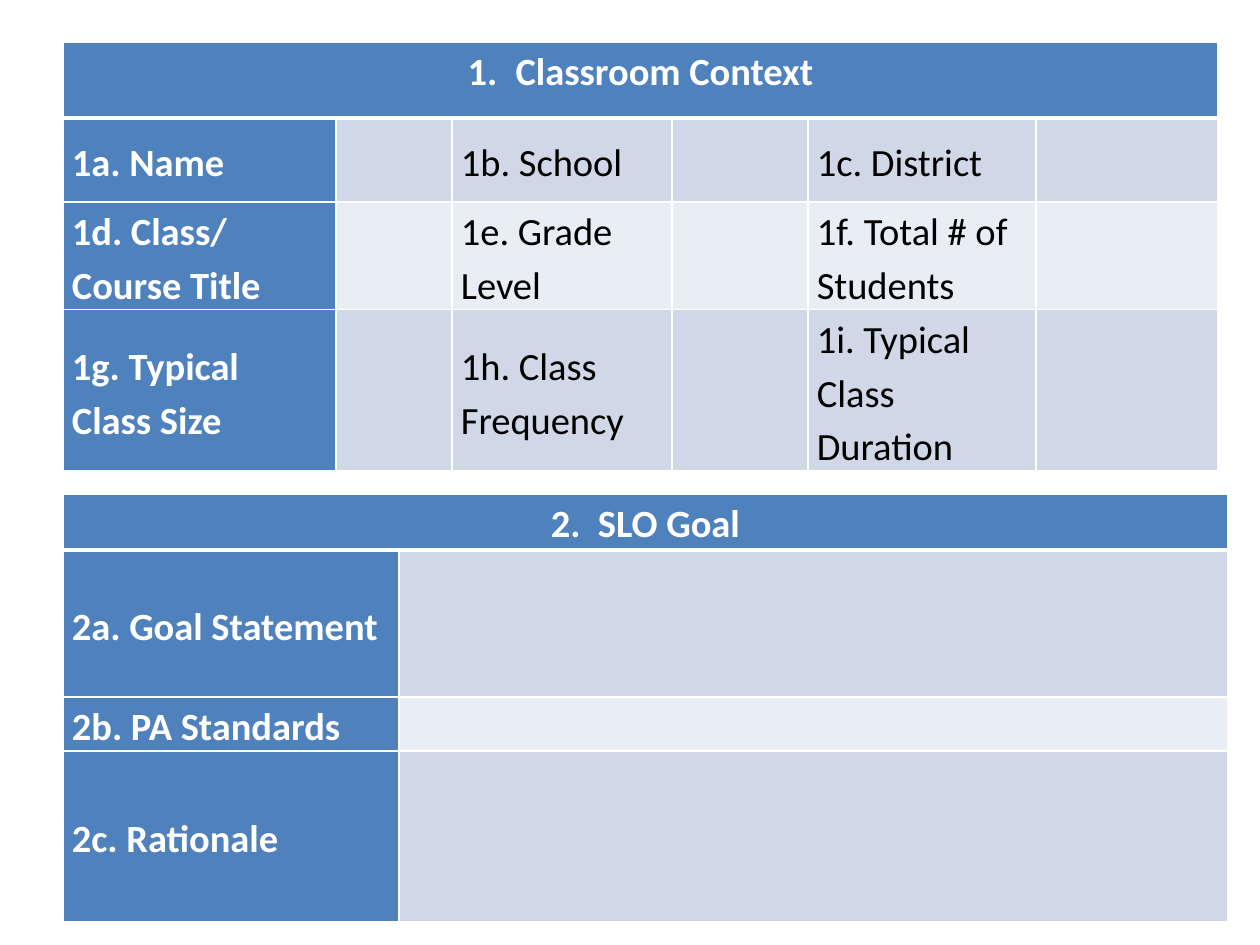
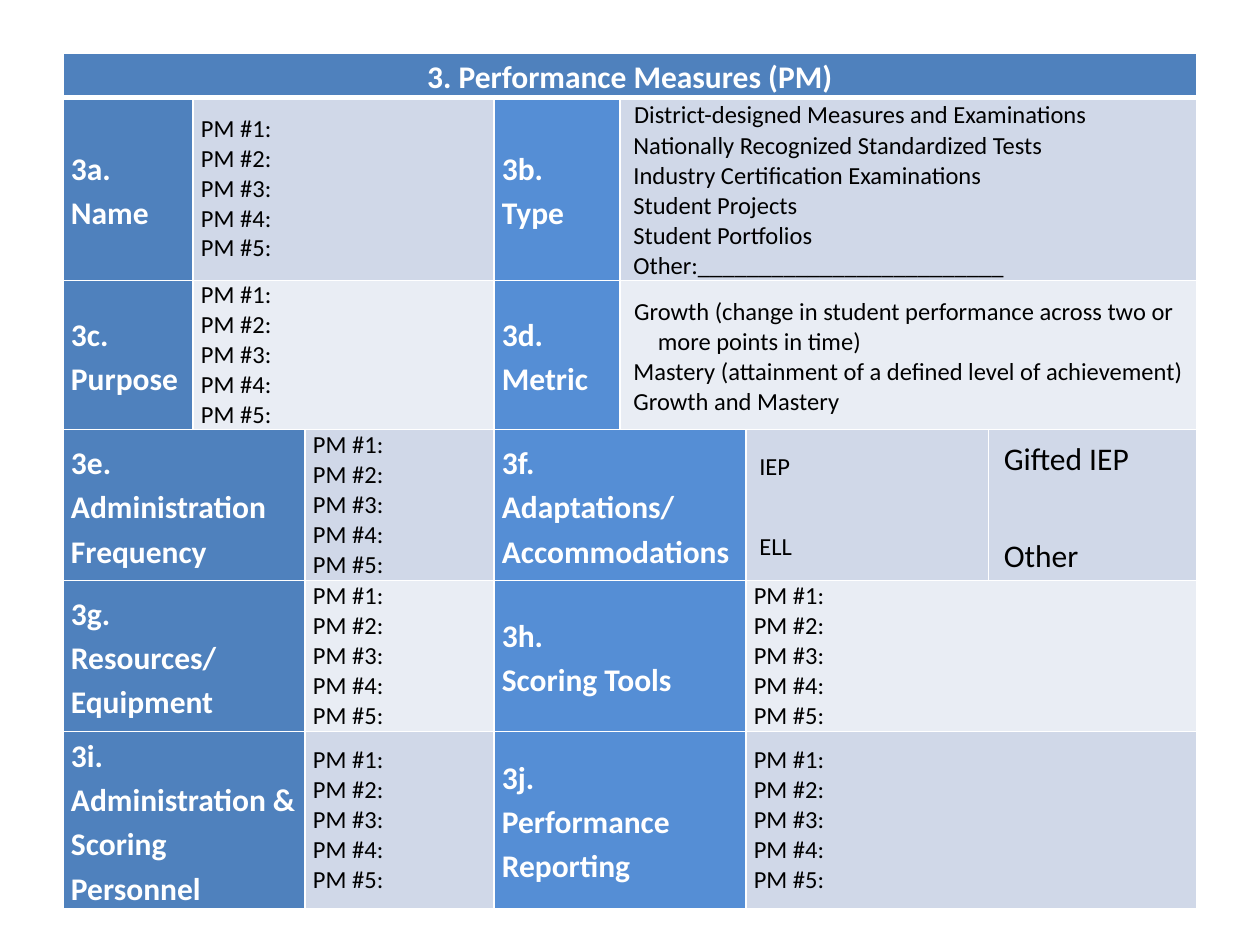
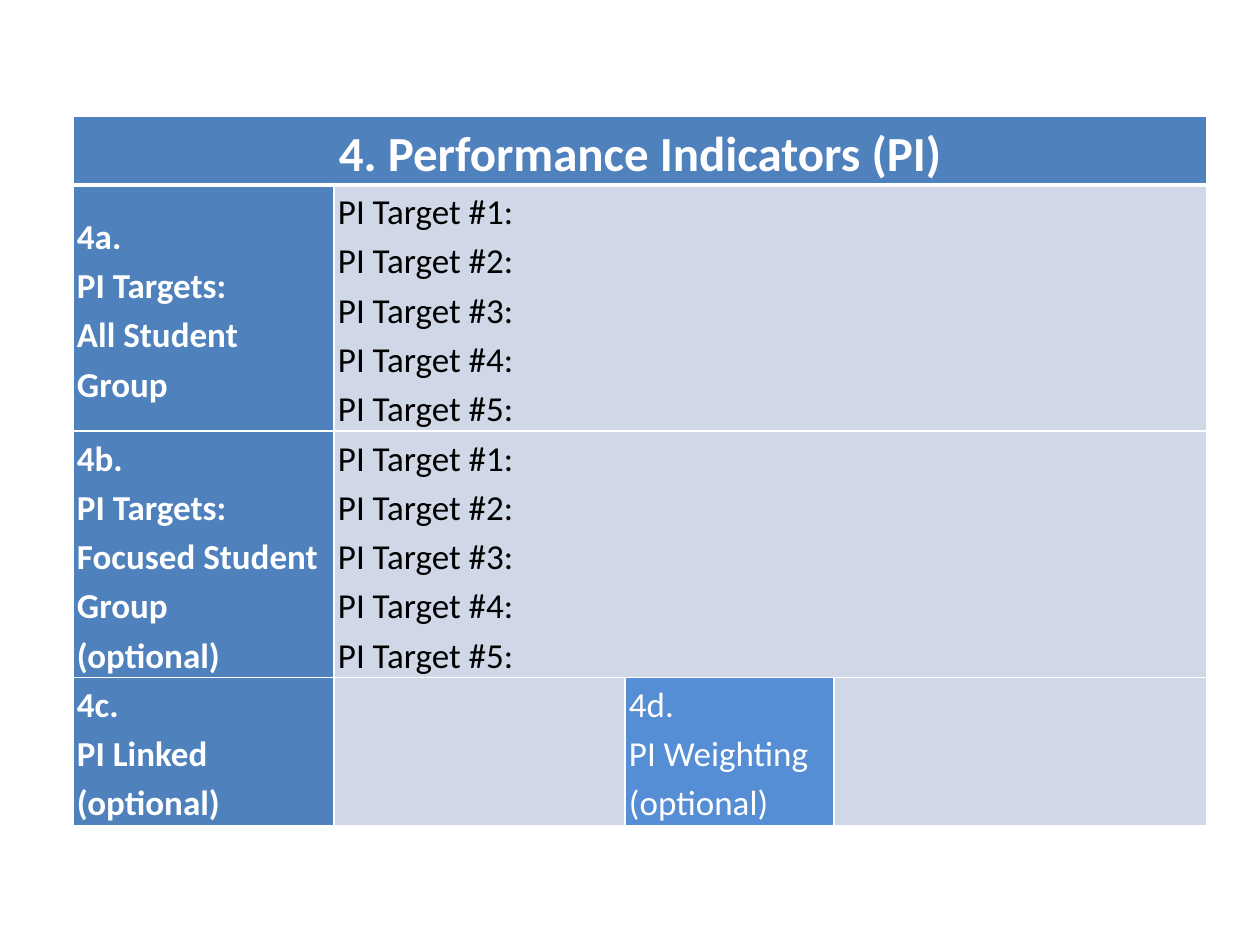
from lxml.etree import SubElement
from pptx import Presentation
from pptx.dml.color import RGBColor
from pptx.enum.text import MSO_ANCHOR, PP_ALIGN
from pptx.oxml.ns import qn
from pptx.util import Pt

PX = 914400 // 126
SLIDE = (1260, 945)
THEME = {
    "font": "Calibri",
    "colors": {"blue": "4F81BD", "accent": "558ED5", "dark_band": "D0D8E8",
               "light_band": "E9EDF4", "white": "FFFFFF", "black": "000000"},
    "border": 1,
    "title_border": 3,
    "loose": 1.15,
}
ALTERNATING = ("dark_band", "light_band")
STYLES = {
    "title": {"size": "title", "fill": "blue", "color": "white", "bold": True},
    "label": {"size": "label", "fill": "blue", "color": "white", "bold": True},
    "accent": {"size": "label", "fill": "accent", "color": "white", "bold": True},
    "plain_accent": {"size": "label", "fill": "accent", "color": "white"},
    "text": {"size": "label"},
    "list": {"size": "list"},
    "choices": {"size": "list", "hanging": 30, "lead": 16},
    "options": {"size": "list", "hanging": 30, "spacing": 1.15, "gap": 26},
    "large_options": {"size": "label", "hanging": 30, "gap": 30},
}


def numbered(prefix):
    return "\n".join(f"{prefix} #{number}:" for number in range(1, 6))


MEASURES = numbered("PM")
TARGETS = numbered("PI Target")
BLANK = ("text", "", 1)

CONTEXT = {
    "at": (63, 42), "inset": 9, "bands": ALTERNATING, "number_title": True,
    "sizes": {"title": 22, "label": 22},
    "columns": [273, 116, 220, 136, 228, 182],
    "heights": [76, 84, 107, 159],
    "rows": [
        [("title", "Classroom Context", 6)],
        [("label", "1a. Name", 1), BLANK, ("text", "1b. School", 1), BLANK,
         ("text", "1c. District", 1), BLANK],
        [("label", "1d. Class/ Course Title", 1), BLANK, ("text", "1e. Grade Level", 1), BLANK,
         ("text", "1f. Total # of Students", 1), BLANK],
        [("label", "1g. Typical\nClass Size", 1), BLANK, ("text", "1h. Class Frequency", 1), BLANK,
         ("text", "1i. Typical Class Duration", 1), BLANK],
    ],
}
GOAL = {
    "at": (63, 494), "inset": 9, "bands": ALTERNATING,
    "sizes": {"title": 22, "label": 22},
    "columns": [336, 829],
    "heights": [56, 147, 53, 171],
    "rows": [
        [("title", "2.  SLO Goal", 2)],
        [("label", "2a. Goal Statement", 1), BLANK],
        [("label", "2b. PA Standards", 1), BLANK],
        [("label", "2c. Rationale", 1), BLANK],
    ],
}
PERFORMANCE_MEASURES = {
    "at": (63, 53), "inset": 8, "bands": ALTERNATING,
    "sizes": {"title": 18, "label": 18, "list": 14}, "list_spacing": 1.0,
    "columns": [130, 112, 189, 126, 126, 243, 208],
    "heights": [41, 181, 147, 151, 151, 174],
    "rows": [
        [("title", "3. Performance Measures (PM)", 7)],
        [("label", "3a.\nName", 1), ("list", MEASURES, 2), ("accent", "3b.\nType", 1),
         ("choices", "District-designed Measures and Examinations\n"
                     " Nationally Recognized Standardized Tests\n"
                     " Industry Certification Examinations\n"
                     " Student Projects\n Student Portfolios\n"
                     " Other:_________________________", 3)],
        [("label", "3c. Purpose", 1), ("list", MEASURES, 2), ("accent", "3d. Metric", 1),
         ("choices", "Growth (change in student performance across two or more points in time)\n"
                     " Mastery (attainment of a defined level of achievement)\n"
                     " Growth and Mastery", 3)],
        [("label", "3e.\nAdministration\nFrequency", 2), ("list", MEASURES, 1),
         ("accent", "3f.\nAdaptations/\nAccommodations", 2),
         ("options", " IEP\n ELL", 1), ("large_options", " Gifted IEP\n Other", 1)],
        [("label", "3g.\nResources/\nEquipment", 2), ("list", MEASURES, 1),
         ("accent", "3h.\nScoring Tools", 2), ("list", MEASURES, 2)],
        [("label", "3i. Administration & Scoring Personnel", 2), ("list", MEASURES, 1),
         ("accent", "3j.\nPerformance Reporting", 2), ("list", MEASURES, 2)],
    ],
}
PERFORMANCE_INDICATORS = {
    "at": (73, 116), "inset": 4, "bands": ("dark_band",),
    "sizes": {"title": 28, "label": 20, "list": 20},
    "columns": [261, 291, 209, 373],
    "heights": [64, 239, 240, 146],
    "rows": [
        [("title", "4. Performance Indicators (PI)", 4)],
        [("label", "4a.\nPI Targets:\nAll Student Group", 1), ("list", TARGETS, 3)],
        [("label", "4b.\nPI Targets:\nFocused Student Group\n(optional)", 1), ("list", TARGETS, 3)],
        [("label", "4c.\nPI Linked\n(optional)", 1), BLANK,
         ("plain_accent", "4d.\nPI Weighting\n(optional)", 1), BLANK],
    ],
}
SLIDES = [[CONTEXT, GOAL], [PERFORMANCE_MEASURES], [PERFORMANCE_INDICATORS]]


def rgb(name):
    return RGBColor.from_string(THEME["colors"][name])


def apply(target, values):
    for name, value in values.items():
        setattr(target, name, value)


def draw_borders(cell, row_index):
    properties = cell._tc.get_or_add_tcPr()
    for side in "LRTB":
        beside_title = (row_index, side) in ((0, "B"), (1, "T"))
        width = THEME["title_border" if beside_title else "border"]
        line = SubElement(properties, qn(f"a:ln{side}"), w=str(Pt(width)))
        fill = SubElement(line, qn("a:solidFill"))
        SubElement(fill, qn("a:srgbClr"), val=THEME["colors"]["white"])


def indent(para, hanging):
    properties = para._p.get_or_add_pPr()
    properties.set("marL", str(hanging * PX))
    properties.set("indent", str(-hanging * PX))
    return properties


def number(para):
    properties = indent(para, 48)
    SubElement(properties, qn("a:buFont"), typeface="+mj-lt")
    SubElement(properties, qn("a:buAutoNum"), type="arabicPeriod")
    tabs = SubElement(properties, qn("a:tabLst"))
    SubElement(tabs, qn("a:tab"), pos=str(30 * PX), algn="l")


def add_span(para, text, size, style):
    span = para.add_run()
    span.text = text
    apply(span.font, {"name": THEME["font"], "size": Pt(size), "bold": style.get("bold", False)})
    span.font.color.rgb = rgb(style.get("color", "black"))


def write(cell, kind, text, form):
    style = STYLES[kind]
    size = form["sizes"].get(style["size"])
    spacing = form.get("list_spacing", THEME["loose"]) if style["size"] == "list" else THEME["loose"]
    for index, line in enumerate(text.split("\n")):
        para = cell.text_frame.add_paragraph() if index else cell.text_frame.paragraphs[0]
        para.line_spacing = style.get("spacing", spacing)
        if kind == "title":
            para.alignment = PP_ALIGN.CENTER
        if "gap" in style:
            para.space_before = Pt(style["gap"] if index else 3)
        if "hanging" in style:
            indent(para, style["hanging"])
        if kind == "title" and form.get("number_title"):
            number(para)
        if "lead" in style and index == 0:
            add_span(para, " ", style["lead"], style)
        add_span(para, line, size, style)


def add_form(page, form):
    columns, heights = form["columns"], form["heights"]
    left, top = form["at"]
    box = page.shapes.add_table(len(heights), len(columns), left * PX, top * PX,
                                sum(columns) * PX, sum(heights) * PX)
    table = box.table
    apply(table, {"first_row": False, "horz_banding": False})
    for column, width in zip(table.columns, columns):
        column.width = width * PX
    for row_index, entries in enumerate(form["rows"]):
        table.rows[row_index].height = heights[row_index] * PX
        band = form["bands"][(row_index - 1) % len(form["bands"])]
        start = 0
        for kind, text, width in entries:
            fill = STYLES[kind].get("fill", band)
            for offset in range(width):
                part = table.cell(row_index, start + offset)
                draw_borders(part, row_index)
                part.fill.solid()
                part.fill.fore_color.rgb = rgb(fill)
            cell = table.cell(row_index, start)
            if width > 1:
                cell.merge(table.cell(row_index, start + width - 1))
            apply(cell, {"margin_left": form["inset"] * PX, "margin_right": form["inset"] * PX,
                         "margin_top": 0, "margin_bottom": 0,
                         "vertical_anchor": MSO_ANCHOR.TOP if kind == "title" else MSO_ANCHOR.MIDDLE})
            if text:
                write(cell, kind, text, form)
            start += width


def main():
    deck = Presentation()
    apply(deck, {"slide_width": SLIDE[0] * PX, "slide_height": SLIDE[1] * PX})
    for forms in SLIDES:
        page = deck.slides.add_slide(deck.slide_layouts[6])
        for form in forms:
            add_form(page, form)
    deck.save("out.pptx")


if __name__ == "__main__":
    main()
